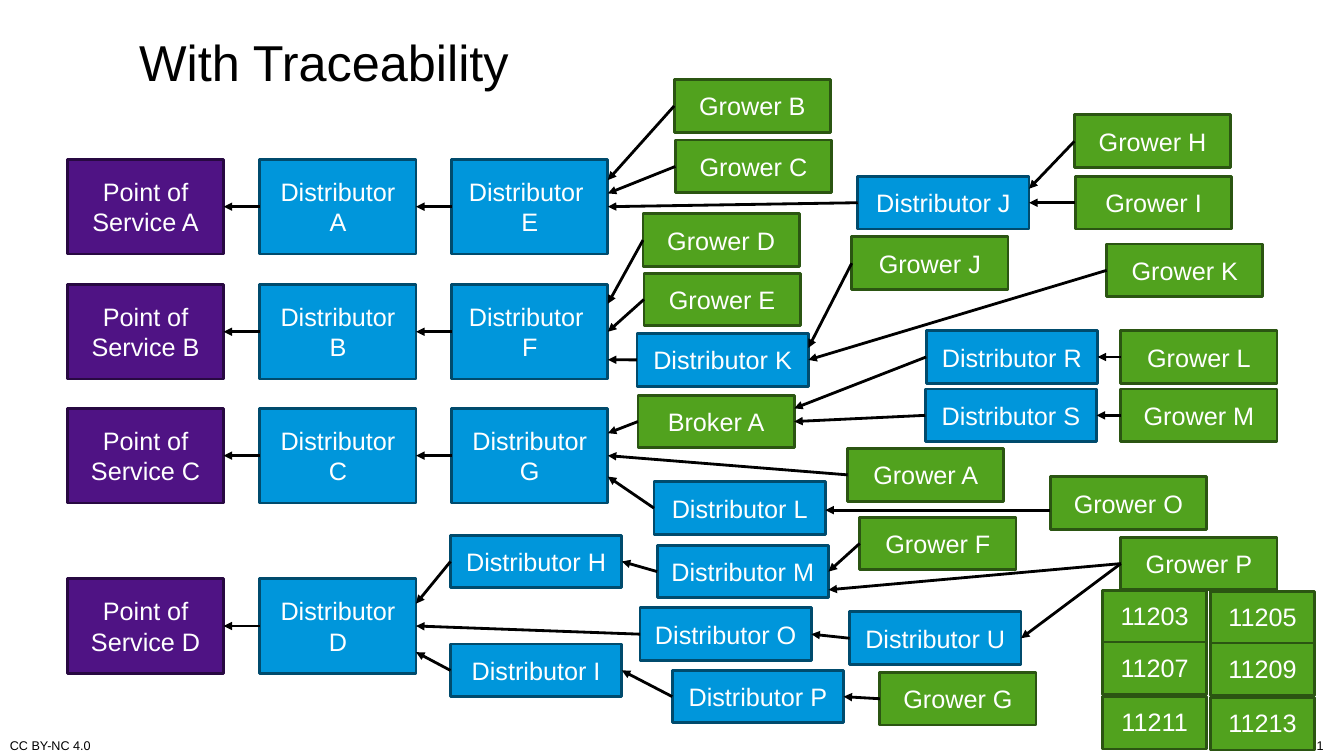
from typing import NamedTuple

from lxml.etree import SubElement
from pptx import Presentation
from pptx.dml.color import RGBColor
from pptx.enum.shapes import MSO_CONNECTOR, MSO_SHAPE
from pptx.enum.text import MSO_ANCHOR, PP_ALIGN
from pptx.oxml.ns import qn
from pptx.util import Pt

BLACK = RGBColor(0x00, 0x00, 0x00)
WHITE = RGBColor(0xFF, 0xFF, 0xFF)
PURPLE = RGBColor(0x4F, 0x13, 0x84)
DARK_PURPLE = RGBColor(0x28, 0x09, 0x42)
BLUE = RGBColor(0x00, 0x96, 0xDB)
DARK_BLUE = RGBColor(0x00, 0x4B, 0x6D)
GREEN = RGBColor(0x51, 0xA2, 0x1E)
DARK_GREEN = RGBColor(0x2B, 0x55, 0x12)

SERVICE = (PURPLE, DARK_PURPLE)
DISTRIBUTOR = (BLUE, DARK_BLUE)
GROWER = (GREEN, DARK_GREEN)

CHAIN_ROWS = (56.9, 146.2, 234.7, 356.4)
CHAIN_COLUMNS = (
    (0, SERVICE, ("Point of Service A", "Point of Service B",
                  "Point of Service C", "Point of Service D")),
    (137.4, DISTRIBUTOR, ("Distributor A", "Distributor B",
                          "Distributor C", "Distributor D")),
    (274.4, DISTRIBUTOR, ("Distributor \nE", "Distributor \nF", "Distributor G")),
)
DISTRIBUTORS = {
    "Distributor H": (273.6, 325.4), "Distributor I": (273.6, 403.2),
    "Distributor J": (564.5, 69.1), "Distributor K": (406.8, 181.4),
    "Distributor L": (419, 287.3), "Distributor M": (421.2, 332.6),
    "Distributor O": (409, 377.3), "Distributor P": (432, 421.9),
    "Distributor R": (613.4, 179.3), "Distributor S": (612.7, 221),
    "Distributor U": (558.7, 380.2),
}
GROWERS = {
    "Grower A": (557.3, 263.5), "Grower B": (433.4, 0), "Grower C": (434.2, 43.2),
    "Grower D": (411.1, 95.8), "Grower E": (411.8, 138.2),
    "Grower F": (565.9, 312.5), "Grower G": (580.3, 423.4),
    "Grower H": (719.3, 25.2), "Grower I": (720, 69.1),
    "Grower J": (560.2, 112.3), "Grower K": (742.3, 117.4),
    "Grower L": (752.4, 179.3), "Grower M": (752.4, 221),
    "Grower O": (702, 283.7), "Grower P": (752.4, 326.9),
    "Broker A": (407.5, 225.4),
}
STRAIGHT_FLOWS = (
    *((f"Distributor {row}", f"Point of Service {row}") for row in "ABCD"),
    ("Distributor E", "Distributor A"), ("Distributor F", "Distributor B"),
    ("Distributor G", "Distributor C"), ("Distributor O", "Distributor D"),
    ("Distributor P", "Distributor I"), ("Distributor M", "Distributor H"),
    ("Grower G", "Distributor P"), ("Distributor U", "Distributor O"),
    ("Grower F", "Distributor M"), ("Grower P", "Distributor U"),
    ("Grower A", "Distributor G"), ("Grower E", "Distributor F"),
    ("Distributor J", "Distributor E"), ("Grower I", "Distributor J"),
    ("Distributor S", "Broker A"), ("Grower M", "Distributor S"),
    ("Grower L", "Distributor R"), ("Grower K", "Distributor K"),
)
SHIFTED_FLOWS = (
    ("Distributor H", "Distributor D", 0, -16),
    ("Distributor I", "Distributor D", 0, 18.7),
    ("Distributor L", "Distributor G", 0, 15),
    ("Broker A", "Distributor G", 0, -16),
    ("Grower D", "Distributor F", 0, -20),
    ("Distributor K", "Distributor F", 0, 20),
    ("Grower B", "Distributor E", 0, -19),
    ("Grower C", "Distributor E", 0, -9.5),
    ("Grower H", "Distributor J", 0, -10),
    ("Distributor R", "Broker A", 0, -9.4),
    ("Grower O", "Distributor L", 5, 1.4),
    ("Grower J", "Distributor K", 0, -8.6),
    ("Grower P", "Distributor M", 0, 13),
)
LOT_CODES = (("11203", "11205"), ("11207", "11209"), ("11211", "11213"))
LOT_ROWS = (0, 36.7, 75.6)


class Box(NamedTuple):
    """A rectangle in points."""
    left: float
    top: float
    width: float
    height: float

    def inner(self, left, top, width, height):
        """Return a box placed relative to this one."""
        return Box(self.left + left, self.top + top, width, height)

    def lengths(self):
        """Return the four sides as lengths."""
        return [Pt(side) for side in self]


def write(paragraph, text, size, color):
    """Add text run by run, with a line break at each newline."""
    for index, line in enumerate(text.split("\n")):
        if index:
            paragraph.add_line_break()
        run = paragraph.add_run()
        run.text = line
        run.font.name = "Arial"
        run.font.size = Pt(size)
        run.font.color.rgb = color


def add_node(slide, box, label, palette):
    """Add one labelled rectangle."""
    shape = slide.shapes.add_shape(MSO_SHAPE.RECTANGLE, *box.lengths())
    shape.shadow.inherit = False
    shape.fill.solid()
    shape.fill.fore_color.rgb, shape.line.color.rgb = palette
    shape.line.width = Pt(2)
    frame = shape.text_frame
    frame.word_wrap = True
    frame.vertical_anchor = MSO_ANCHOR.MIDDLE
    paragraph = frame.paragraphs[0]
    paragraph.alignment = PP_ALIGN.CENTER
    write(paragraph, label, 18, WHITE)
    return shape


def add_flow(slide, source, target, source_shift=0, target_shift=0):
    """Draw an arrow from the left side of source to the right side of target."""
    arrow = slide.shapes.add_connector(
        MSO_CONNECTOR.STRAIGHT,
        source.left, source.top + source.height // 2 + Pt(source_shift),
        target.left + target.width, target.top + target.height // 2 + Pt(target_shift))
    if not source_shift:
        arrow.begin_connect(source, 1)
    if not target_shift:
        arrow.end_connect(target, 3)
    arrow.line.color.rgb = BLACK
    arrow.line.width = Pt(2)
    properties = arrow._element.spPr
    SubElement(properties.find(qn("a:ln")), qn("a:tailEnd"), type="triangle")
    SubElement(properties, qn("a:effectLst"))


def add_title(slide, box):
    """Place and fill the title placeholder."""
    title = slide.shapes.title
    title.left, title.top, title.width, title.height = box.lengths()
    title.text_frame.vertical_anchor = MSO_ANCHOR.MIDDLE
    paragraph = title.text_frame.paragraphs[0]
    paragraph.alignment = PP_ALIGN.LEFT
    write(paragraph, "With Traceability", 36, BLACK)


def add_footer(slide, box):
    """Add the licence at the left and the page number at the right."""
    for text, alignment in (("CC BY-NC 4.0", PP_ALIGN.LEFT), ("31", PP_ALIGN.RIGHT)):
        frame = slide.shapes.add_textbox(*box.lengths()).text_frame
        frame.word_wrap = True
        frame.vertical_anchor = MSO_ANCHOR.BOTTOM
        paragraph = frame.paragraphs[0]
        paragraph.alignment = alignment
        write(paragraph, text, 9, BLACK)


def add_network(slide, box):
    """Add the supply chain with its arrows."""
    nodes = {}
    for left, palette, labels in CHAIN_COLUMNS:
        for top, label in zip(CHAIN_ROWS, labels):
            place = box.inner(left, top, 111.6, 67.7)
            nodes[label.replace("\n", "")] = add_node(slide, place, label, palette)
    for group, width, palette in ((DISTRIBUTORS, 122.4, DISTRIBUTOR),
                                  (GROWERS, 111.6, GROWER)):
        for label, (left, top) in group.items():
            place = box.inner(left, top, width, 37.6)
            nodes[label] = add_node(slide, place, label, palette)
    for source, target, *shifts in STRAIGHT_FLOWS + SHIFTED_FLOWS:
        add_flow(slide, nodes[source], nodes[target], *shifts)


def add_lot_codes(slide, box):
    """Add the two columns of lot codes."""
    for top, codes in zip(LOT_ROWS, LOT_CODES):
        for column, code in enumerate(codes):
            place = box.inner(column * 77, top + column * 0.7, 74.2, 37.6)
            frame = add_node(slide, place, code, GROWER).text_frame
            frame.vertical_anchor = MSO_ANCHOR.TOP
            frame.margin_top = Pt(7.2)


def main():
    """Build and save the presentation."""
    presentation = Presentation()
    presentation.slide_width, presentation.slide_height = Pt(960), Pt(540)
    slide = presentation.slides.add_slide(presentation.slide_layouts[5])
    add_title(slide, Box(92.2, 0, 828, 87.1))
    add_footer(slide, Box(0, 525, 952.6, 16.5))
    add_network(slide, Box(48.2, 56.9, 864, 461))
    add_lot_codes(slide, Box(787.7, 421.9, 151.2, 113.9))
    presentation.save("out.pptx")


if __name__ == "__main__":
    main()
